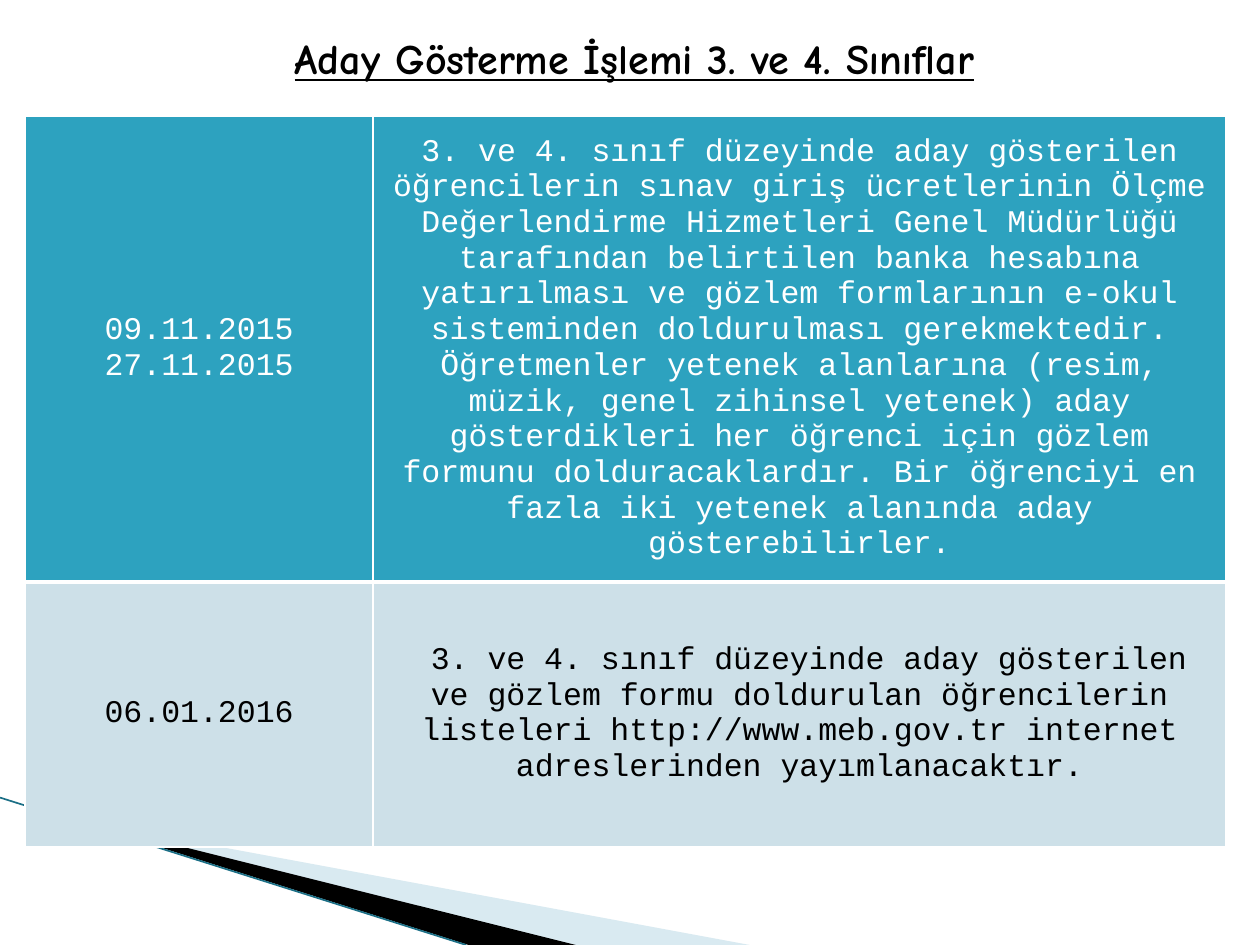
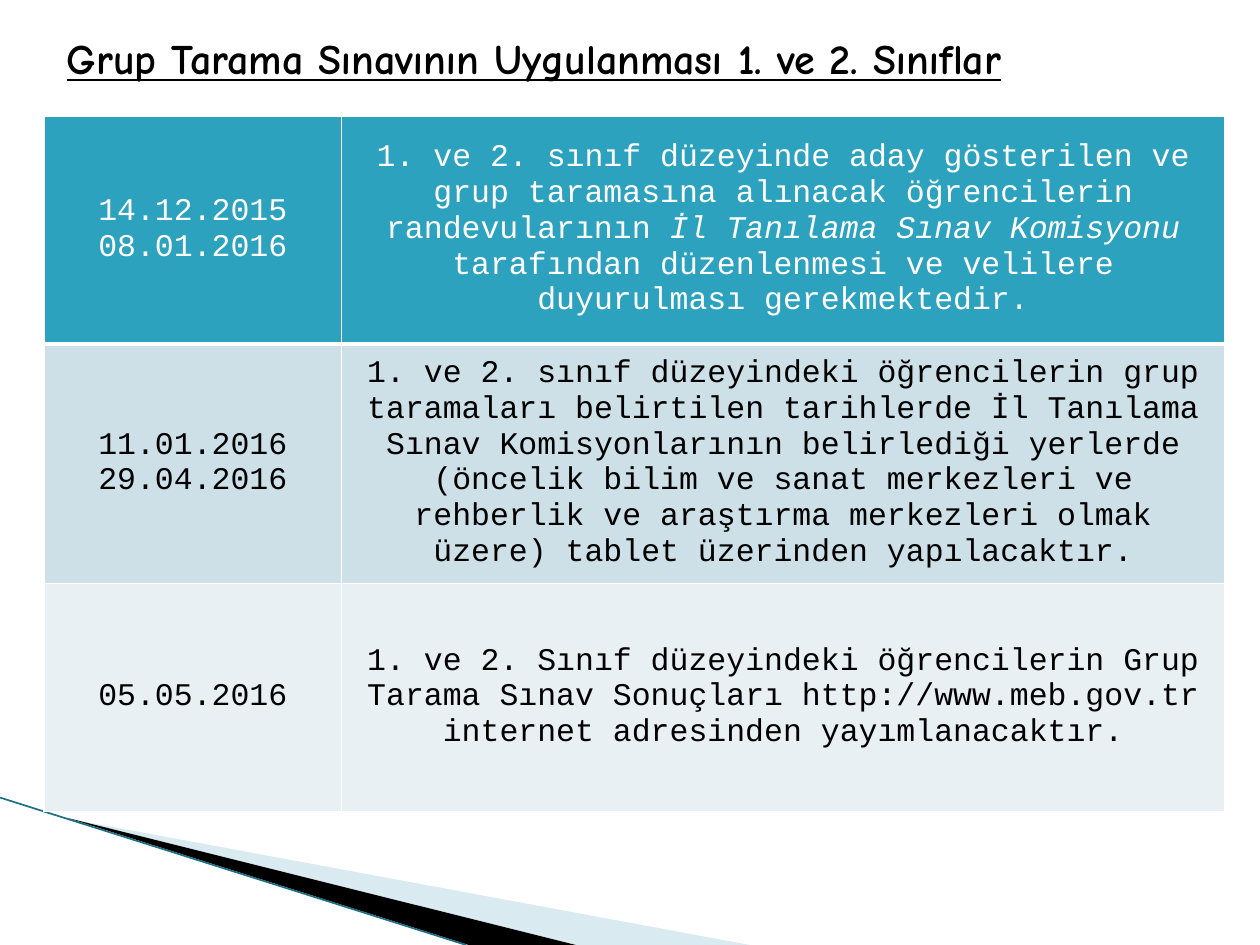
from dataclasses import dataclass

import pptx
import pptx.dml.color
import pptx.enum.shapes
import pptx.enum.text
import pptx.oxml.ns
import pptx.util
from lxml import etree

Inches = pptx.util.Inches
Pt = pptx.util.Pt
qn = pptx.oxml.ns.qn
PP_ALIGN = pptx.enum.text.PP_ALIGN


@dataclass(frozen=True)
class Theme:
    ink: str = "000000"
    paper: str = "FFFFFF"
    header: str = "2DA2BF"
    bands: tuple = ("CDE0E8", "E8F0F4")
    pale_wedge: str = "A0CBDC"
    wedge_edge: str = "1B6F86"
    title_font: str = "Comic Neue"
    table_font: str = "Courier New"
    title_size: int = 24
    table_size: int = 18
    rule: float = 1
    header_rule: float = 3


def rgb(colour):
    return pptx.dml.color.RGBColor.from_string(colour)


class Deck:
    def __init__(self, theme):
        self.theme = theme
        self.presentation = pptx.Presentation()
        self.presentation.slide_width = Inches(10)
        self.presentation.slide_height = Inches(7.5)
        self.slide = None

    def new_slide(self):
        blank = self.presentation.slide_layouts[6]
        self.slide = self.presentation.slides.add_slide(blank)
        self.wedge([(0.55, 6.5), (5.95, 7.5), (4.56, 7.5)], self.theme.pale_wedge, 40)
        self.wedge([(0.53, 6.49), (4.57, 7.5), (3.72, 7.5)], self.theme.ink)
        self.edge((0, 6.33), (3.7, 7.5))

    def wedge(self, corners, colour, opacity=100):
        points = [(Inches(x), Inches(y)) for x, y in corners]
        builder = self.slide.shapes.build_freeform(*points[0])
        builder.add_line_segments(points[1:], close=True)
        wedge = builder.convert_to_shape()
        wedge.shadow.inherit = False
        wedge.line.fill.background()
        wedge.fill.solid()
        wedge.fill.fore_color.rgb = rgb(colour)
        if opacity < 100:
            for fill_colour in wedge.element.spPr.iter(qn("a:srgbClr")):
                etree.SubElement(fill_colour, qn("a:alpha"), val=str(opacity * 1000))

    def edge(self, start, end):
        edge = self.slide.shapes.add_connector(
            pptx.enum.shapes.MSO_CONNECTOR.STRAIGHT,
            *(Inches(length) for length in start + end))
        edge.line.color.rgb = rgb(self.theme.wedge_edge)
        edge.line.width = Pt(0.95)
        etree.SubElement(edge.element.spPr, qn("a:effectLst"))

    def title(self, text, left, width, align):
        box = self.slide.shapes.add_textbox(
            Inches(left), Inches(0.21), Inches(width), Inches(0.5))
        box.text_frame.word_wrap = True
        box.text_frame.text = text
        heading = box.text_frame.paragraphs[0]
        heading.alignment = align
        self.style(heading.runs[0], self.theme.title_font,
                   self.theme.title_size, self.theme.ink)
        heading.runs[0].font.bold = True
        heading.runs[0].font.underline = True

    def style(self, run, font, size, colour):
        run.font.name = font
        run.font.size = Pt(size)
        run.font.color.rgb = rgb(colour)

    def schedule(self, left, widths, heights, entries):
        """Table of (dates, description pieces); every second piece is italic."""
        theme = self.theme
        table = self.slide.shapes.add_table(
            len(entries), 2, Inches(left), Inches(0.92),
            Inches(sum(widths)), Inches(sum(heights))).table
        table.first_row = table.horz_banding = False
        for column, width in zip(table.columns, widths):
            column.width = Inches(width)
        for row, height in zip(table.rows, heights):
            row.height = Inches(height)
        fills = (theme.header,) + theme.bands
        for index, (dates, description) in enumerate(entries):
            ink = theme.ink if index else theme.paper
            top = theme.header_rule if index == 1 else theme.rule
            bottom = theme.rule if index else theme.header_rule
            date_lines = [[date] for date in dates]
            for column, lines in enumerate((date_lines, [description])):
                cell = table.cell(index, column)
                self.borders(cell, top, bottom)
                cell.fill.solid()
                cell.fill.fore_color.rgb = rgb(fills[index])
                self.cell_text(cell, lines, ink)

    def borders(self, cell, top, bottom):
        properties = cell._tc.get_or_add_tcPr()
        rule = self.theme.rule
        for side, width in (("L", rule), ("R", rule), ("T", top), ("B", bottom)):
            border = etree.SubElement(properties, qn(f"a:ln{side}"), w=str(Pt(width)))
            fill = etree.SubElement(border, qn("a:solidFill"))
            etree.SubElement(fill, qn("a:srgbClr"), val=self.theme.paper)

    def cell_text(self, cell, lines, ink):
        cell.vertical_anchor = pptx.enum.text.MSO_ANCHOR.MIDDLE
        frame = cell.text_frame
        for number, pieces in enumerate(lines):
            paragraph = frame.add_paragraph() if number else frame.paragraphs[0]
            paragraph.alignment = PP_ALIGN.CENTER
            for position, piece in enumerate(pieces):
                run = paragraph.add_run()
                run.text = piece
                self.style(run, self.theme.table_font, self.theme.table_size, ink)
                if position % 2:
                    run.font.italic = True

    def indent_first_line(self, row, column, length):
        table = self.slide.shapes[-1].table
        paragraph = table.cell(row, column).text_frame.paragraphs[0]
        paragraph._p.get_or_add_pPr().set("indent", str(Inches(length)))


def nomination_slide(deck):
    deck.new_slide()
    deck.title("Aday Gösterme İşlemi 3. ve 4. Sınıflar", 0.98, 8.11, PP_ALIGN.CENTER)
    deck.schedule(0.2, (2.76, 6.77), (3.69, 2.1), [
        (["09.11.2015", "27.11.2015"],
         ["3. ve 4. sınıf düzeyinde aday gösterilen öğrencilerin sınav giriş "
          "ücretlerinin Ölçme Değerlendirme Hizmetleri Genel Müdürlüğü tarafından "
          "belirtilen banka hesabına yatırılması ve gözlem formlarının e-okul "
          "sisteminden doldurulması gerekmektedir. Öğretmenler yetenek alanlarına "
          "(resim, müzik, genel zihinsel yetenek) aday gösterdikleri her öğrenci "
          "için gözlem formunu dolduracaklardır. Bir öğrenciyi en fazla iki yetenek "
          "alanında aday gösterebilirler."]),
        (["06.01.2016"],
         ["3. ve 4. sınıf düzeyinde aday gösterilen ve gözlem formu doldurulan "
          "öğrencilerin listeleri http://www.meb.gov.tr internet adreslerinden "
          "yayımlanacaktır."]),
    ])
    deck.indent_first_line(1, 1, 0.15)


def group_screening_slide(deck):
    deck.new_slide()
    deck.title("Grup Tarama Sınavının Uygulanması 1. ve 2. Sınıflar",
               0.43, 9.29, PP_ALIGN.LEFT)
    deck.schedule(0.35, (2.36, 7.01), (1.81, 1.89, 1.81), [
        (["14.12.2015", "08.01.2016"],
         ["1. ve 2. sınıf düzeyinde aday gösterilen ve grup taramasına alınacak "
          "öğrencilerin randevularının ",
          "İl Tanılama Sınav Komisyonu",
          " tarafından düzenlenmesi ve velilere duyurulması gerekmektedir."]),
        (["11.01.2016", "29.04.2016"],
         ["1. ve 2. sınıf düzeyindeki öğrencilerin grup taramaları belirtilen "
          "tarihlerde İl Tanılama Sınav Komisyonlarının belirlediği yerlerde "
          "(öncelik bilim ve sanat merkezleri ve rehberlik ve araştırma merkezleri "
          "olmak üzere) tablet üzerinden yapılacaktır."]),
        (["05.05.2016"],
         ["1. ve 2. Sınıf düzeyindeki öğrencilerin Grup Tarama Sınav Sonuçları "
          "http://www.meb.gov.tr internet adresinden yayımlanacaktır."]),
    ])


def main():
    deck = Deck(Theme())
    nomination_slide(deck)
    group_screening_slide(deck)
    deck.presentation.save("out.pptx")


if __name__ == "__main__":
    main()
